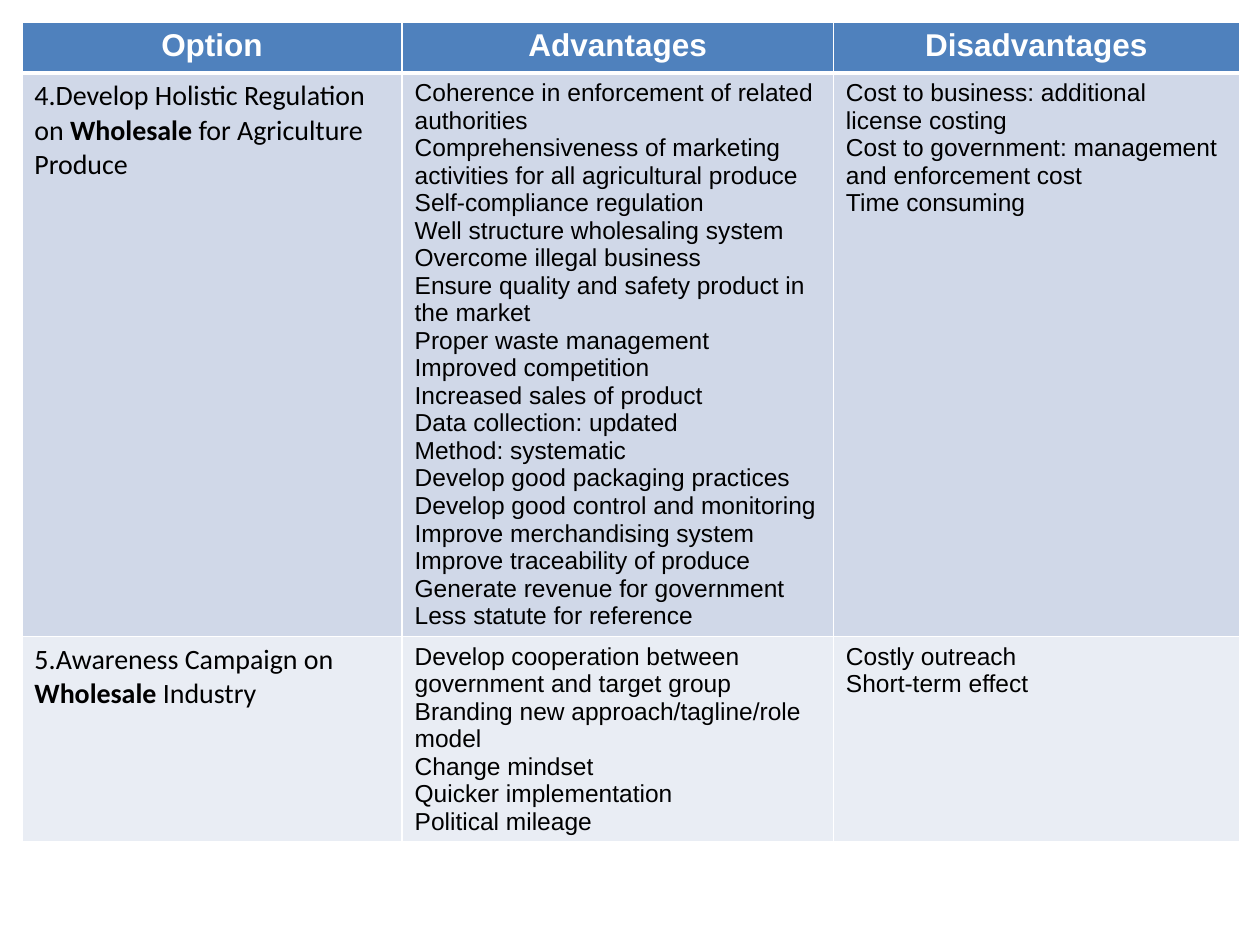
from dataclasses import dataclass

from lxml import etree
from pptx import Presentation
from pptx.dml.color import RGBColor
from pptx.enum.text import PP_ALIGN
from pptx.oxml.ns import qn
from pptx.table import _Cell
from pptx.util import Pt

CENTER, LEFT = PP_ALIGN.CENTER, PP_ALIGN.LEFT
COLORS = {
    "header": "4F81BD",
    "band_dark": "D0D8E8",
    "band_light": "E9EDF4",
    "white": "FFFFFF",
    "black": "000000",
}
COLUMN_WIDTHS = (217.25, 246.5, 232)
ROW_HEIGHTS = (29.2, 322, 117)
TABLE_LEFT = TABLE_TOP = 12.5
THIN, THICK = 1, 3
EMPHASIS = "Wholesale"


@dataclass(frozen=True)
class TextStyle:
    font: str
    size: float
    color: str
    bold: bool = False
    align: PP_ALIGN = LEFT


@dataclass(frozen=True)
class Option:
    title: str
    advantages: tuple[str, ...]
    disadvantages: tuple[str, ...]
    fill: str


HEADING = TextStyle("Arial", 18, "white", True, CENTER)
TITLE = TextStyle("Calibri", 16, "black")
BODY = TextStyle("Arial", 14, "black")

HEADINGS = ("Option", "Advantages", "Disadvantages")
OPTIONS = (
    Option(
        "4.Develop Holistic Regulation on Wholesale for Agriculture Produce",
        (
            "Coherence in enforcement of related authorities",
            "Comprehensiveness of marketing activities for all agricultural produce",
            "Self-compliance regulation",
            "Well structure wholesaling system",
            "Overcome illegal business",
            "Ensure quality and safety product in the market",
            "Proper waste management",
            "Improved competition",
            "Increased sales of product",
            "Data collection: updated",
            "Method: systematic",
            "Develop good packaging practices",
            "Develop good control and monitoring",
            "Improve merchandising system",
            "Improve traceability of produce",
            "Generate revenue for government",
            "Less statute for reference",
        ),
        (
            "Cost to business: additional license costing",
            "Cost to government: management and enforcement cost",
            "Time consuming",
        ),
        "band_dark",
    ),
    Option(
        "5.Awareness Campaign on Wholesale Industry",
        (
            "Develop cooperation between government and target group",
            "Branding new approach/tagline/role model",
            "Change mindset",
            "Quicker implementation",
            "Political mileage",
        ),
        ("Costly outreach", "Short-term effect"),
        "band_light",
    ),
)


def color(name: str) -> RGBColor:
    return RGBColor.from_string(COLORS[name])


def set_borders(cell: _Cell, top: float, bottom: float) -> None:
    properties = cell._tc.get_or_add_tcPr()
    widths = {"a:lnL": THIN, "a:lnR": THIN, "a:lnT": top, "a:lnB": bottom}
    for tag, width in widths.items():
        line = etree.SubElement(properties, qn(tag), w=str(Pt(width)))
        fill = etree.SubElement(line, qn("a:solidFill"))
        etree.SubElement(fill, qn("a:srgbClr"), val=COLORS["white"])


def write_cell(cell: _Cell, lines: tuple[str, ...], style: TextStyle) -> None:
    frame = cell.text_frame
    frame.text = "\n".join(lines)
    for para in frame.paragraphs:
        para.alignment = style.align
        for span in para.runs:
            span.font.name = style.font
            span.font.size = Pt(style.size)
            span.font.bold = style.bold
            span.font.color.rgb = color(style.color)


def write_title(cell: _Cell, title: str) -> None:
    before, after = title.split(EMPHASIS)
    para = cell.text_frame.paragraphs[0]
    for text in (before, EMPHASIS, after):
        span = para.add_run()
        span.text = text
        span.font.name = TITLE.font
        span.font.size = Pt(TITLE.size)
        span.font.bold = text == EMPHASIS
        span.font.color.rgb = color(TITLE.color)


def main() -> None:
    deck = Presentation()
    deck.slide_width, deck.slide_height = Pt(720), Pt(540)
    page = deck.slides.add_slide(deck.slide_layouts[6])
    table = page.shapes.add_table(
        len(ROW_HEIGHTS), len(COLUMN_WIDTHS), Pt(TABLE_LEFT), Pt(TABLE_TOP),
        Pt(sum(COLUMN_WIDTHS)), Pt(sum(ROW_HEIGHTS)),
    ).table
    for column, width in zip(table.columns, COLUMN_WIDTHS):
        column.width = Pt(width)

    fills = ("header", *(option.fill for option in OPTIONS))
    for index, (row, height, fill) in enumerate(zip(table.rows, ROW_HEIGHTS, fills)):
        row.height = Pt(height)
        for cell in row.cells:
            set_borders(cell, THICK if index == 1 else THIN, THICK if index == 0 else THIN)
            cell.fill.solid()
            cell.fill.fore_color.rgb = color(fill)

    for column, heading in enumerate(HEADINGS):
        write_cell(table.cell(0, column), (heading,), HEADING)
    for row, option in enumerate(OPTIONS, start=1):
        write_title(table.cell(row, 0), option.title)
        write_cell(table.cell(row, 1), option.advantages, BODY)
        write_cell(table.cell(row, 2), option.disadvantages, BODY)

    deck.save("out.pptx")


if __name__ == "__main__":
    main()
